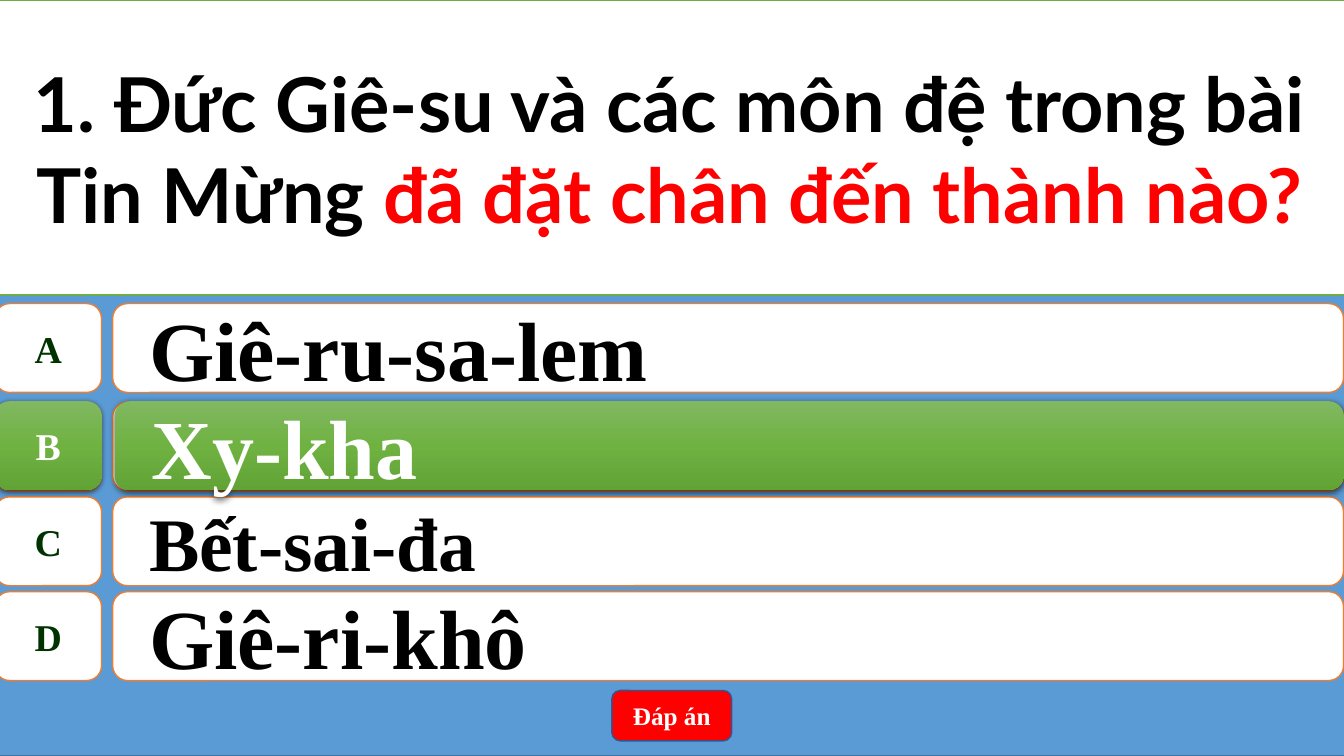
from copy import deepcopy
from dataclasses import dataclass

from lxml.etree import SubElement
from pptx import Presentation
from pptx.dml.color import RGBColor
from pptx.enum.shapes import MSO_SHAPE
from pptx.enum.text import MSO_ANCHOR, PP_ALIGN
from pptx.oxml.ns import qn
from pptx.util import Cm, Pt


@dataclass(frozen=True)
class Theme:
    backdrop: str = "5B9BD5"
    backdrop_line: str = "43739E"
    white: str = "FFFFFF"
    black: str = "000000"
    red: str = "FF0000"
    letter: str = "003300"
    row_line: str = "ED7D31"
    button_line: str = "325491"
    question_line: str = "70AD47"
    correct: tuple = ((0, "81B861"), (0.5, "6FB242"), (1, "62A336"))
    serif: str = "Times New Roman"
    sans: str = "Lato"
    question_size: int = 54
    answer_size: int = 60
    small_answer_size: int = 54
    letter_size: int = 27
    button_size: int = 18


def write_text(shape, runs, size, font, align=PP_ALIGN.CENTER, wrap=True, indented=False):
    frame = shape.text_frame
    frame.word_wrap = wrap
    frame.vertical_anchor = MSO_ANCHOR.MIDDLE
    paragraph = frame.paragraphs[0]
    paragraph.alignment = align
    if indented:
        paragraph.level = 1
        properties = paragraph._p.get_or_add_pPr()
        properties.set("marL", str(Cm(1.27)))
        properties.set("indent", str(Cm(-0.71)))
    for text, color in runs:
        run = paragraph.add_run()
        run.text = text
        run.font.size = Pt(size)
        run.font.name = font
        run.font.bold = True
        run.font.color.rgb = RGBColor.from_string(color)


class QuizSlide:
    def __init__(self, presentation, theme):
        self.theme = theme
        self.slide = presentation.slides.add_slide(presentation.slide_layouts[6])

    def box(self, kind, left, top, width, height, fill, line):
        shape = self.slide.shapes.add_shape(kind, Cm(left), Cm(top), Cm(width), Cm(height))
        shape.shadow.inherit = False
        shape.fill.solid()
        shape.fill.fore_color.rgb = RGBColor.from_string(fill)
        shape.line.color.rgb = RGBColor.from_string(line)
        shape.line.width = Pt(1)
        return shape

    def row_boxes(self, top):
        theme = self.theme
        places = ((MSO_SHAPE.FLOWCHART_ALTERNATE_PROCESS, -0.13, 2.69),
                  (MSO_SHAPE.ROUNDED_RECTANGLE, 2.84, 31.02))
        return [self.box(kind, left, top, width, 2.24, theme.white, theme.row_line)
                for kind, left, width in places]

    def row_text(self, boxes, letter, answer, size, letter_color, answer_color):
        letter_box, answer_box = boxes
        write_text(letter_box, [(letter, letter_color)], self.theme.letter_size,
                   self.theme.serif, wrap=False)
        write_text(answer_box, [(answer, answer_color)], size, self.theme.serif,
                   align=PP_ALIGN.LEFT, indented=True)

    def answer_row(self, top, letter, answer, size):
        self.row_text(self.row_boxes(top), letter, answer, size,
                      self.theme.letter, self.theme.black)

    def correct_row(self, top, letter, answer, size):
        self.row_boxes(top)
        boxes = self.row_boxes(top - 0.02)
        boxes[1].left, boxes[1].width = Cm(2.9), Cm(30.96)
        for shape in boxes:
            self.highlight(shape)
        self.row_text(boxes, letter, answer, size, self.theme.white, self.theme.white)

    def highlight(self, shape):
        shape.line.fill.background()
        shape.fill.gradient()
        shape.fill.gradient_angle = 270
        properties = shape._element.spPr
        stops = properties.find(".//" + qn("a:gsLst"))
        stops.insert(1, deepcopy(stops[0]))
        for stop, (position, color) in zip(shape.fill.gradient_stops, self.theme.correct):
            stop.position = position
            stop.color.rgb = RGBColor.from_string(color)
        shadow = SubElement(properties.find(qn("a:effectLst")), qn("a:outerShdw"),
                            blurRad=str(Pt(4.5)), dist=str(Pt(1.5)), dir="5400000",
                            algn="ctr", rotWithShape="0")
        color = SubElement(shadow, qn("a:srgbClr"), val=self.theme.black)
        SubElement(color, qn("a:alpha"), val="63000")

    def backdrop(self):
        self.box(MSO_SHAPE.RECTANGLE, -0.13, 0, 34.01, 19.05,
                 self.theme.backdrop, self.theme.backdrop_line)

    def button(self, text):
        theme = self.theme
        shape = self.box(MSO_SHAPE.ROUNDED_RECTANGLE, 15.42, 17.4, 3.02, 1.27,
                         theme.red, theme.button_line)
        write_text(shape, [(text, theme.white)], theme.button_size, theme.serif)

    def question(self, opening, emphasis):
        theme = self.theme
        shape = self.box(MSO_SHAPE.RECTANGLE, -0.13, 0, 34.01, 7.44,
                         theme.white, theme.question_line)
        write_text(shape, [(opening, theme.black), (emphasis, theme.red)],
                   theme.question_size, theme.sans)


def main():
    presentation = Presentation()
    presentation.slide_width = Cm(33.87)
    presentation.slide_height = Cm(19.05)
    theme = Theme()
    quiz = QuizSlide(presentation, theme)
    quiz.backdrop()
    quiz.answer_row(7.65, "A", "Giê-ru-sa-lem", theme.answer_size)
    quiz.button("Đáp án")
    quiz.answer_row(12.52, "C", "Bết-sai-đa", theme.small_answer_size)
    quiz.answer_row(14.91, "D", "Giê-ri-khô", theme.answer_size)
    quiz.correct_row(10.13, "B", "Xy-kha", theme.answer_size)
    quiz.question("1. Đức Giê-su và các môn đệ trong bài Tin Mừng ",
                  "đã đặt chân đến thành nào?")
    presentation.save("out.pptx")


if __name__ == "__main__":
    main()
